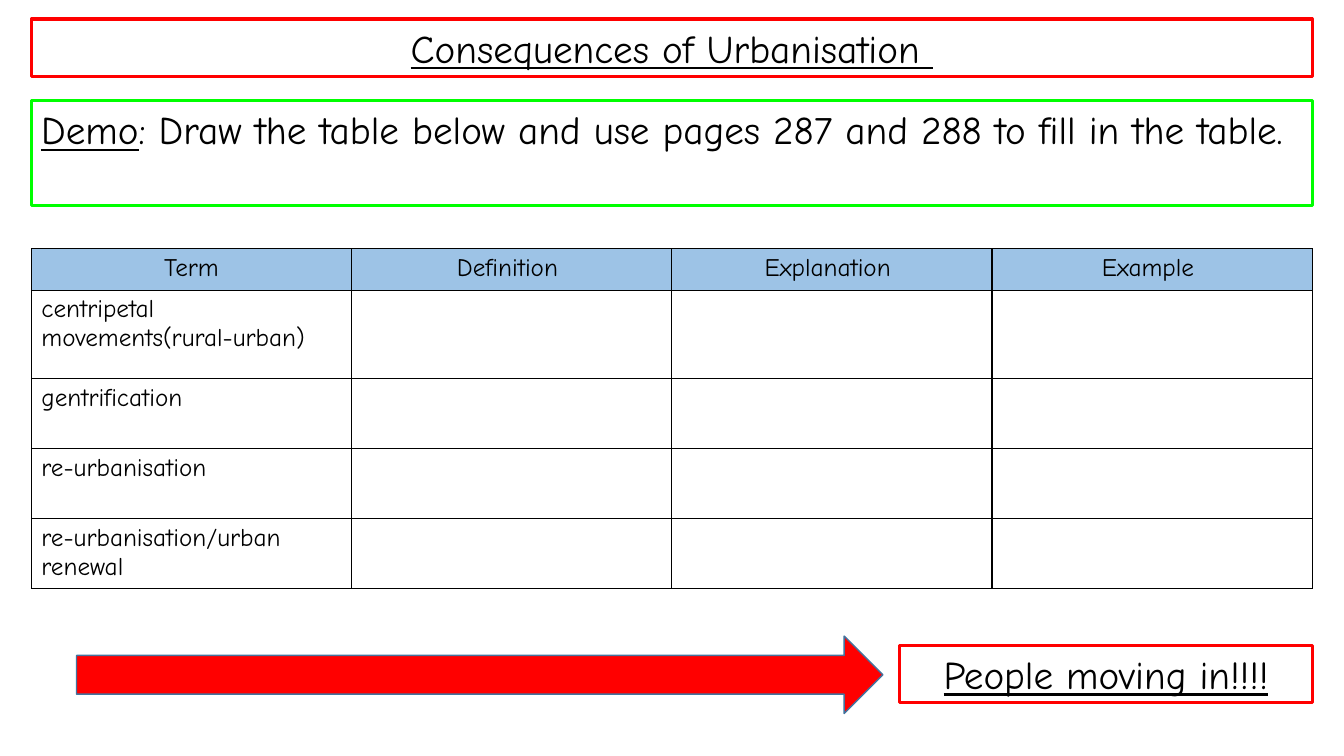
import pptx
import pptx.util
import pptx.dml.color
import pptx.enum.shapes
import pptx.enum.text
import pptx.oxml
import pptx.oxml.ns
from dataclasses import dataclass

Cm = pptx.util.Cm
Pt = pptx.util.Pt
Align = pptx.enum.text.PP_ALIGN
Shape = pptx.enum.shapes.MSO_SHAPE

TITLE = [("Consequences of Urbanisation ", True)]
TASK = [("Demo", True),
        (": Draw the table below and use pages 287 and 288 to fill in the table.", False)]
NOTE = [("People moving in!!!!", True)]
HEADS = ["Term", "Definition ", "Explanation ", "Example "]
TERMS = [
    ("centripetal movements(rural-urban)", 2.23),
    ("gentrification", 1.76),
    ("re-urbanisation", 1.76),
    ("re-urbanisation/urban renewal", 1.76),
]


@dataclass(frozen=True)
class Theme:
    font: str = "Comic Neue"
    ink: str = "000000"
    red: str = "FF0000"
    green: str = "00FF00"
    blue: str = "9DC3E6"
    edge: str = "43739E"
    large: int = 28
    small: int = 18
    frame: float = 2.25
    thin: float = 1


theme = Theme()
LEFT, WIDE = 0.79, 32.28
HEAD = 1.04
BAR = 1.45
NOTE_W = 10.39


def tint(code):
    return pptx.dml.color.RGBColor.from_string(code)


def style(run, size, under=False):
    run.font.name = theme.font
    run.font.size = Pt(size)
    run.font.color.rgb = tint(theme.ink)
    run.font.underline = under


def place(shape, left, top, width, height):
    shape.left, shape.top = Cm(left), Cm(top)
    shape.width, shape.height = Cm(width), Cm(height)


def outline(shape, color, width):
    shape.line.color.rgb = tint(color)
    shape.line.width = Pt(width)


def fill_box(shape, parts, color, align):
    outline(shape, color, theme.frame)
    frame = shape.text_frame
    frame.word_wrap = True
    frame.auto_size = pptx.enum.text.MSO_AUTO_SIZE.NONE
    frame.vertical_anchor = pptx.enum.text.MSO_ANCHOR.TOP
    para = frame.paragraphs[0]
    para.alignment = align
    for text, under in parts:
        run = para.add_run()
        run.text = text
        style(run, theme.large, under)


def border(cell):
    props = cell._tc.get_or_add_tcPr()
    space = pptx.oxml.ns.nsdecls("a")
    for i, side in enumerate("LRTB"):
        props.insert(i, pptx.oxml.parse_xml(
            f'<a:ln{side} {space} w="{Pt(theme.thin)}"><a:solidFill>'
            f'<a:srgbClr val="{theme.ink}"/></a:solidFill></a:ln{side}>'))


def add_grid(slide):
    tall = [HEAD] + [height for _, height in TERMS]
    rows = [HEADS] + [[term, "", "", ""] for term, _ in TERMS]
    grid = slide.shapes.add_table(len(rows), len(HEADS), Cm(LEFT), Cm(6.27),
                                  Cm(WIDE), Cm(sum(tall))).table
    grid.first_row = grid.horz_banding = False
    for col in grid.columns:
        col.width = Cm(WIDE / len(HEADS))
    for r, texts in enumerate(rows):
        grid.rows[r].height = Cm(tall[r])
        for c, text in enumerate(texts):
            cell = grid.cell(r, c)
            if r == 0:
                cell.fill.solid()
                cell.fill.fore_color.rgb = tint(theme.blue)
            else:
                cell.fill.background()
            border(cell)
            if text:
                cell.text_frame.text = text
                para = cell.text_frame.paragraphs[0]
                para.alignment = Align.LEFT if r else Align.CENTER
                style(para.runs[0], theme.small)


def add_arrow(slide):
    arrow = slide.shapes.add_shape(Shape.RIGHT_ARROW, Cm(1.93), Cm(16.03), Cm(20.32), Cm(1.95))
    arrow.shadow.inherit = False
    arrow.fill.solid()
    arrow.fill.fore_color.rgb = tint(theme.red)
    outline(arrow, theme.edge, theme.thin)


def main():
    deck = pptx.Presentation()
    deck.slide_width, deck.slide_height = Cm(33.87), Cm(19.05)
    slide = deck.slides.add_slide(deck.slide_layouts[5])
    title = slide.shapes.title
    task = slide.shapes.add_textbox(0, 0, 0, 0)
    note = slide.shapes.add_textbox(0, 0, 0, 0)
    place(title, LEFT, 0.48, WIDE, BAR)
    place(task, LEFT, 2.54, WIDE, 2.64)
    place(note, LEFT + WIDE - NOTE_W, 16.26, NOTE_W, BAR)
    fill_box(title, TITLE, theme.red, Align.CENTER)
    fill_box(task, TASK, theme.green, Align.LEFT)
    fill_box(note, NOTE, theme.red, Align.CENTER)
    add_grid(slide)
    add_arrow(slide)
    deck.save("out.pptx")


if __name__ == "__main__":
    main()
